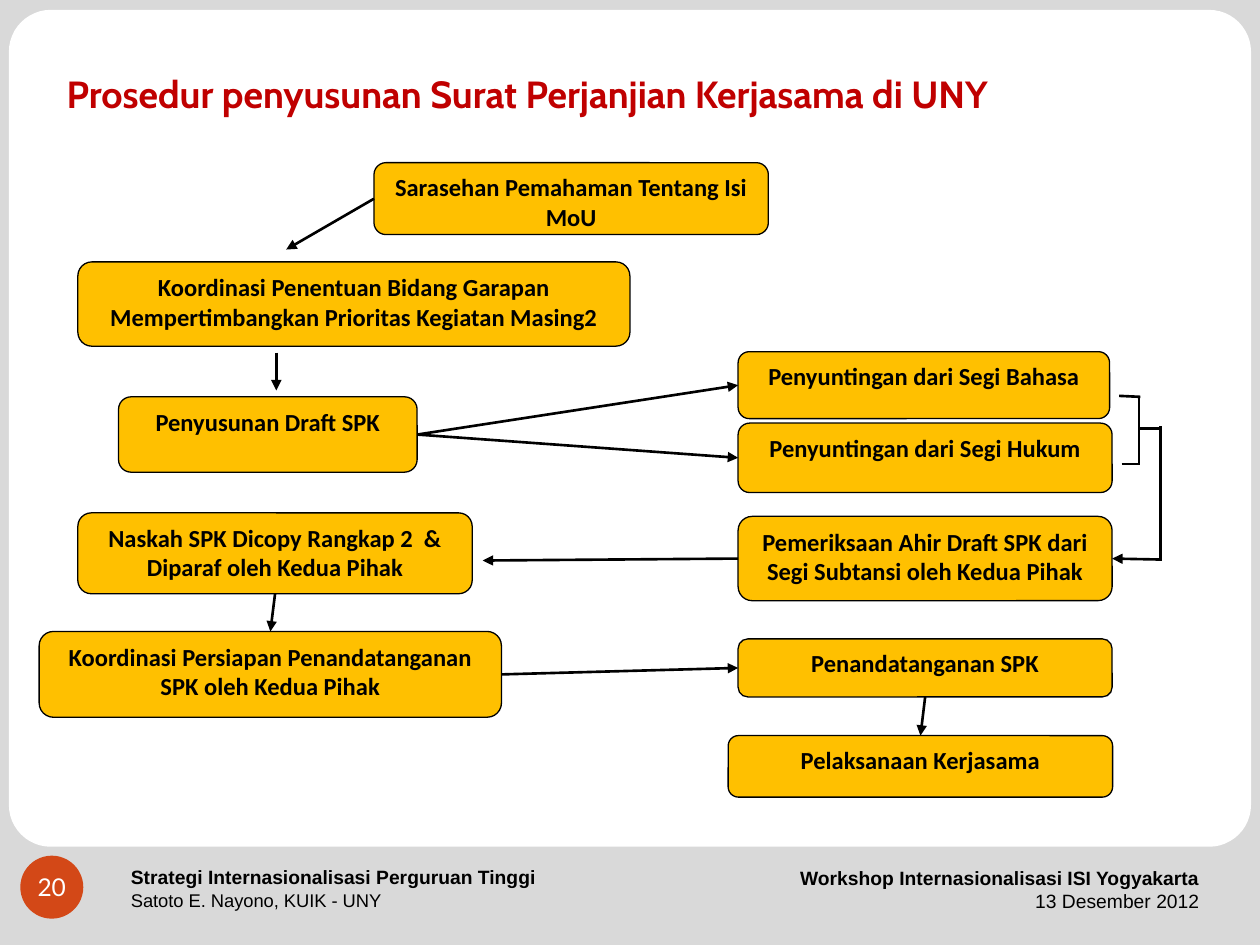
from lxml import etree
from pptx import Presentation
from pptx import util as u
from pptx.dml.color import RGBColor
from pptx.enum import shapes, text
from pptx.oxml.ns import qn

COLORS = {"frame": "D9D9D9", "panel": "FFFFFF", "step": "FFC000",
          "ink": "000000", "title": "C00000", "badge": "D34817"}

HEADING = "Prosedur penyusunan Surat Perjanjian Kerjasama di UNY"
PAGE = "20"

FOOTERS = [
    ((2.39, 17.27, 11, 1.27), text.PP_ALIGN.LEFT,
     [("Strategi Internasionalisasi Perguruan Tinggi", 11, True),
      ("Satoto E. Nayono, KUIK - UNY", 10.5, False)]),
    ((15.87, 17.27, 8.56, 1.32), text.PP_ALIGN.RIGHT,
     [("Workshop Internasionalisasi ISI Yogyakarta", 11, True),
      ("13 Desember 2012", 11, False)]),
]

STEPS = {
    "sarasehan": ("Sarasehan Pemahaman Tentang Isi MoU", (7.54, 3.28, 7.95, 1.45)),
    "bidang": ("Koordinasi Penentuan Bidang Garapan Mempertimbangkan Prioritas Kegiatan Masing2",
               (1.57, 5.28, 11.13, 1.7)),
    "draft": ("Penyusunan Draft SPK", (2.39, 8, 6.02, 1.52)),
    "bahasa": ("Penyuntingan dari Segi Bahasa", (14.88, 7.09, 7.49, 1.35)),
    "hukum": ("Penyuntingan dari Segi Hukum", (14.88, 8.53, 7.54, 1.4)),
    "pemeriksaan": ("Pemeriksaan Ahir Draft SPK dari Segi Subtansi oleh Kedua Pihak",
                    (14.88, 10.41, 7.54, 1.7)),
    "naskah": ("Naskah SPK Dicopy Rangkap 2  & Diparaf oleh Kedua Pihak",
               (1.57, 10.34, 7.95, 1.63)),
    "persiapan": ("Koordinasi Persiapan Penandatanganan SPK oleh Kedua Pihak",
                  (0.79, 12.73, 9.32, 1.73)),
    "penandatanganan": ("Penandatanganan SPK", (14.88, 12.88, 7.54, 1.17)),
    "pelaksanaan": ("Pelaksanaan Kerjasama", (14.68, 14.83, 7.75, 1.24)),
}

TOP, LEFT, BOTTOM, RIGHT = range(4)
ARROWS = [
    (("sarasehan", LEFT), (5.77, 5.03)),
    ((5.57, 7.11), (5.57, 7.87)),
    (("draft", RIGHT), ("bahasa", LEFT)),
    (("draft", RIGHT), ("hukum", LEFT)),
    ((23.42, 11.28), ("pemeriksaan", RIGHT)),
    (("pemeriksaan", LEFT), (9.73, 11.3)),
    (("naskah", BOTTOM), ("persiapan", TOP)),
    (("persiapan", RIGHT), ("penandatanganan", LEFT)),
    (("penandatanganan", BOTTOM), ("pelaksanaan", TOP)),
]
BRACKET = [
    ((22.56, 7.98), (22.99, 8)),
    ((22.61, 9.35), (22.99, 9.35)),
    ((22.96, 8.03), (22.96, 9.37)),
    ((22.99, 8.64), (23.39, 8.64)),
    ((23.39, 8.59), (23.39, 11.28)),
]


def rgb(name):
    return RGBColor.from_string(COLORS[name])


def cm(values):
    return [u.Cm(value) for value in values]


def write(paragraph, words, size, font, color, bold=False, align=None):
    paragraph.alignment = align
    run = paragraph.add_run()
    run.text = words
    run.font.size = u.Pt(size)
    run.font.name = font
    run.font.bold = bold
    run.font.color.rgb = rgb(color)


def add_block(slide, kind, place, fill, outline=None, corner=None):
    block = slide.shapes.add_shape(kind, *cm(place))
    block.shadow.inherit = False
    block.fill.solid()
    block.fill.fore_color.rgb = rgb(fill)
    if outline:
        block.line.color.rgb = rgb(outline)
        block.line.width = u.Pt(0.75)
    else:
        block.line.fill.background()
    if corner is not None:
        block.adjustments[0] = corner
    return block


def add_line(slide, start, end, boxes, arrow=False):
    free = [(0, 0) if isinstance(point[0], str) else point for point in (start, end)]
    line = slide.shapes.add_connector(shapes.MSO_CONNECTOR.STRAIGHT, *cm(free[0] + free[1]))
    for point, connect in ((start, line.begin_connect), (end, line.end_connect)):
        if isinstance(point[0], str):
            connect(boxes[point[0]], point[1])
    line.line.color.rgb = rgb("ink")
    line.line.width = u.Pt(1.5)
    if arrow:
        etree.SubElement(line.line._get_or_add_ln(), qn("a:tailEnd"), type="triangle")
    etree.SubElement(line.element.spPr, qn("a:effectLst"))


def main():
    deck = Presentation()
    deck.slide_width, deck.slide_height = cm((25.4, 19.05))
    slide = deck.slides.add_slide(deck.slide_layouts[5])
    kinds = shapes.MSO_SHAPE

    add_block(slide, kinds.RECTANGLE, (0, 0, 25.4, 19.05), "frame")
    add_block(slide, kinds.ROUNDED_RECTANGLE, (0.18, 0.2, 25.04, 16.87), "panel", corner=0.05)

    for place, align, rows in FOOTERS:
        frame = slide.shapes.add_textbox(*cm(place)).text_frame
        frame.word_wrap = True
        frame.vertical_anchor = text.MSO_ANCHOR.MIDDLE
        for index, (words, size, bold) in enumerate(rows):
            paragraph = frame.add_paragraph() if index else frame.paragraphs[0]
            write(paragraph, words, size, "Arial", "ink", bold, align)

    badge = add_block(slide, kinds.OVAL, (0.41, 17.25, 1.27, 1.27), "badge")
    frame = badge.text_frame
    frame.margin_left = frame.margin_right = frame.margin_top = frame.margin_bottom = 0
    frame.word_wrap = False
    frame.vertical_anchor = text.MSO_ANCHOR.MIDDLE
    write(frame.paragraphs[0], PAGE, 14, "Lato", "panel", align=text.PP_ALIGN.CENTER)

    title = slide.shapes.title
    badge.element.addnext(title.element)
    title.left, title.top, title.width, title.height = cm((1.09, 0.58, 23.01, 2.01))
    frame = title.text_frame
    frame.auto_size = text.MSO_AUTO_SIZE.NONE
    frame.word_wrap = True
    frame.vertical_anchor = text.MSO_ANCHOR.BOTTOM
    frame.margin_bottom = u.Cm(0.25)
    write(frame.paragraphs[0], HEADING, 21.6, "Cabin", "title", True, text.PP_ALIGN.LEFT)

    boxes = {}
    for key, (words, place) in STEPS.items():
        box = add_block(slide, kinds.ROUNDED_RECTANGLE, place, "step", "ink")
        box.text_frame.word_wrap = True
        box.text_frame.vertical_anchor = text.MSO_ANCHOR.TOP
        write(box.text_frame.paragraphs[0], words, 14, "Calibri", "ink", True,
              text.PP_ALIGN.CENTER)
        boxes[key] = box

    for start, end in BRACKET:
        add_line(slide, start, end, boxes)
    for start, end in ARROWS:
        add_line(slide, start, end, boxes, arrow=True)

    deck.save("out.pptx")


if __name__ == "__main__":
    main()
